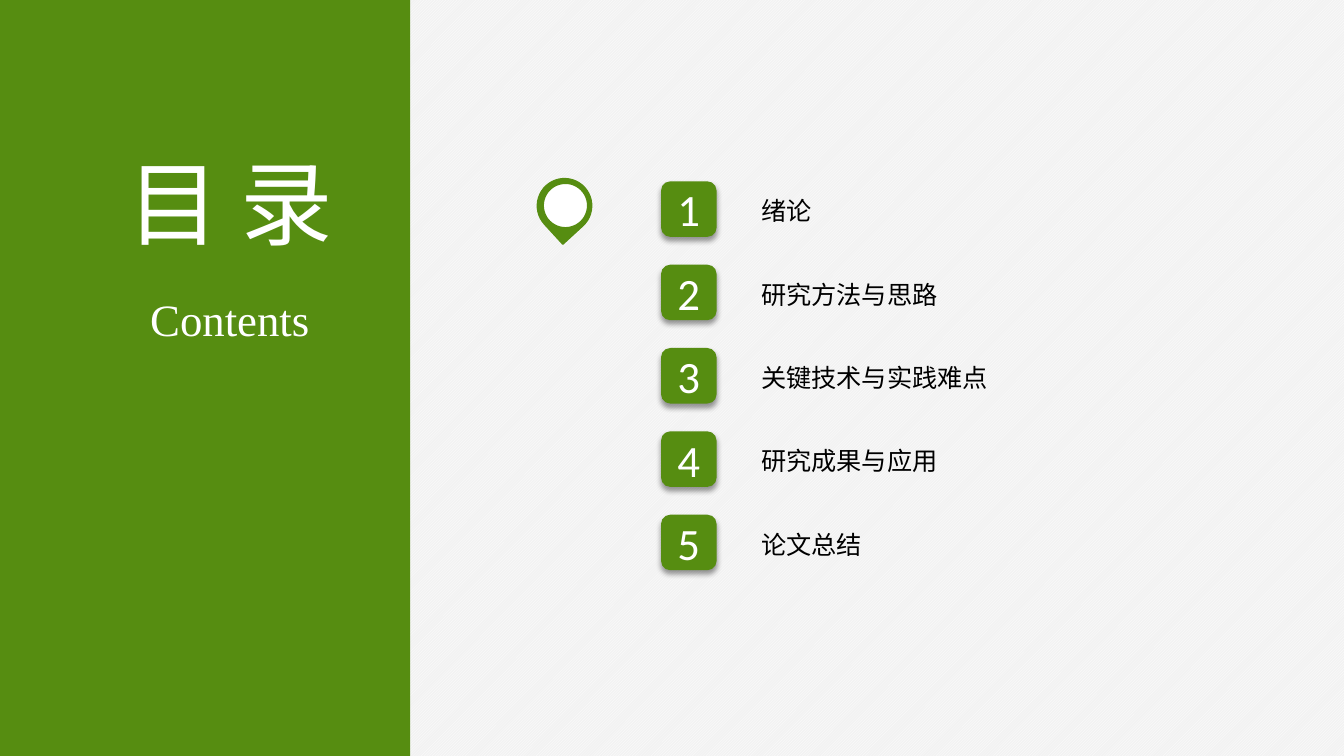
"""Build the green contents slide with five numbered topics."""
from dataclasses import dataclass
from typing import Any

import pptx
import pptx.dml.color
import pptx.enum.dml
import pptx.enum.shapes
import pptx.enum.text
import pptx.oxml
import pptx.oxml.ns
import pptx.util
from lxml import etree

Cm = pptx.util.Cm
Pt = pptx.util.Pt
KIND = pptx.enum.shapes.MSO_SHAPE
ALIGN = pptx.enum.text.PP_ALIGN
ANCHOR = pptx.enum.text.MSO_ANCHOR
qn = pptx.oxml.ns.qn

HUES = {"green": "568D11", "white": "FFFFFF", "pale": "F2F2F2", "black": "000000"}
HAN = "Noto Sans CJK SC"
STEP = 2.1
TOPICS = ["绪论", "研究方法与思路", "关键技术与实践难点", "研究成果与应用", "论文总结"]


@dataclass(frozen=True)
class Box:
    left: float
    top: float
    width: float
    height: float

    def spans(self) -> tuple:
        return Cm(self.left), Cm(self.top), Cm(self.width), Cm(self.height)


@dataclass(frozen=True)
class Badge:
    label: str
    box: Box


def hue(name: str) -> Any:
    return pptx.dml.color.RGBColor.from_string(HUES[name])


def place(shape: Any, box: Box) -> Any:
    shape.left, shape.top, shape.width, shape.height = box.spans()
    return shape


def write(shape: Any, text: str, *, font: str, size: float, color: str,
          align: Any = ALIGN.CENTER, anchor: Any = ANCHOR.MIDDLE,
          wrap: bool = False, inset: float = 0, pitch: Any = None) -> None:
    frame = shape.text_frame
    frame.text = text
    frame.auto_size = pptx.enum.text.MSO_AUTO_SIZE.NONE
    frame.word_wrap = wrap
    frame.vertical_anchor = anchor
    frame.margin_left = frame.margin_right = Cm(inset)
    frame.margin_top = frame.margin_bottom = Cm(inset)
    for para in frame.paragraphs:
        para.alignment = align
        para.space_before = Pt(0)
        para.line_spacing = pitch
        for run in para.runs:
            run.font.name = font
            run.font.size = Pt(size)
            run.font.color.rgb = hue(color)
    for props in shape.element.iter(qn("a:rPr")):
        etree.SubElement(props, qn("a:ea")).set("typeface", font)
    for props in shape.element.iter(qn("a:pPr")):
        props.set("marL", "0")
        props.set("indent", "0")
        etree.SubElement(props, qn("a:buNone"))


def draw(shapes: Any, kind: Any, box: Box, fill: str, line: str = "") -> Any:
    shape = shapes.add_shape(kind, *box.spans())
    shape.shadow.inherit = False
    shape.fill.solid()
    shape.fill.fore_color.rgb = hue(fill)
    if line:
        shape.line.color.rgb = hue(line)
        shape.line.width = Pt(1)
    else:
        shape.line.fill.background()
    return shape


def shade(shape: Any) -> None:
    glow = next(shape.element.iter(qn("a:effectLst")))
    outer = etree.SubElement(glow, qn("a:outerShdw"), blurRad=str(Pt(4)),
                             dist=str(Pt(3)), dir="5400000", rotWithShape="0")
    tint = etree.SubElement(outer, qn("a:srgbClr"), val=HUES["black"])
    etree.SubElement(tint, qn("a:alpha"), val="40000")


def stamp(shapes: Any, badge: Badge) -> None:
    shape = draw(shapes, KIND.ROUNDED_RECTANGLE, badge.box, "green")
    shade(shape)
    write(shape, badge.label, font="Calibri", size=32, color="white")


def main() -> None:
    deck = pptx.Presentation()
    deck.slide_width, deck.slide_height = Cm(33.87), Cm(19.05)
    slide = deck.slides.add_slide(deck.slide_layouts[1])
    shapes = slide.shapes
    back = slide.background.fill
    back.patterned()
    back.pattern = pptx.enum.dml.MSO_PATTERN.LIGHT_UPWARD_DIAGONAL
    back.fore_color.rgb = hue("white")
    back.back_color.rgb = hue("pale")

    title = place(shapes.title, Box(2.59, 3.55, 6.4, 3.07))
    panel = draw(shapes, KIND.RECTANGLE, Box(0, 0, 10.34, 19.05), "green")
    title.element.addprevious(panel.element)
    write(title, "目 录", font=HAN, size=66, color="white")
    label = shapes.add_textbox(*Box(3.51, 7.21, 4.57, 1.63).spans())
    write(label, "Contents", font="Times New Roman", size=32, color="white")

    for row in range(len(TOPICS)):
        stamp(shapes, Badge(str(row + 1), Box(16.66, 4.57 + row * STEP, 1.4, 1.4)))
    body = place(slide.placeholders[1], Box(19.18, 3.59, 9, STEP * len(TOPICS)))
    write(body, "\n".join(TOPICS), font=HAN, size=18, color="black", wrap=True,
          align=ALIGN.LEFT, anchor=ANCHOR.TOP, pitch=Cm(STEP))

    pin = shapes.add_group_shape().shapes
    drop = draw(pin, KIND.TEAR, Box(13.54, 4.5, 1.37, 1.37), "green", "green")
    drop.rotation = 137.5
    draw(pin, KIND.OVAL, Box(13.69, 4.62, 1.12, 1.12), "white", "green")
    deck.save("out.pptx")


if __name__ == "__main__":
    main()
